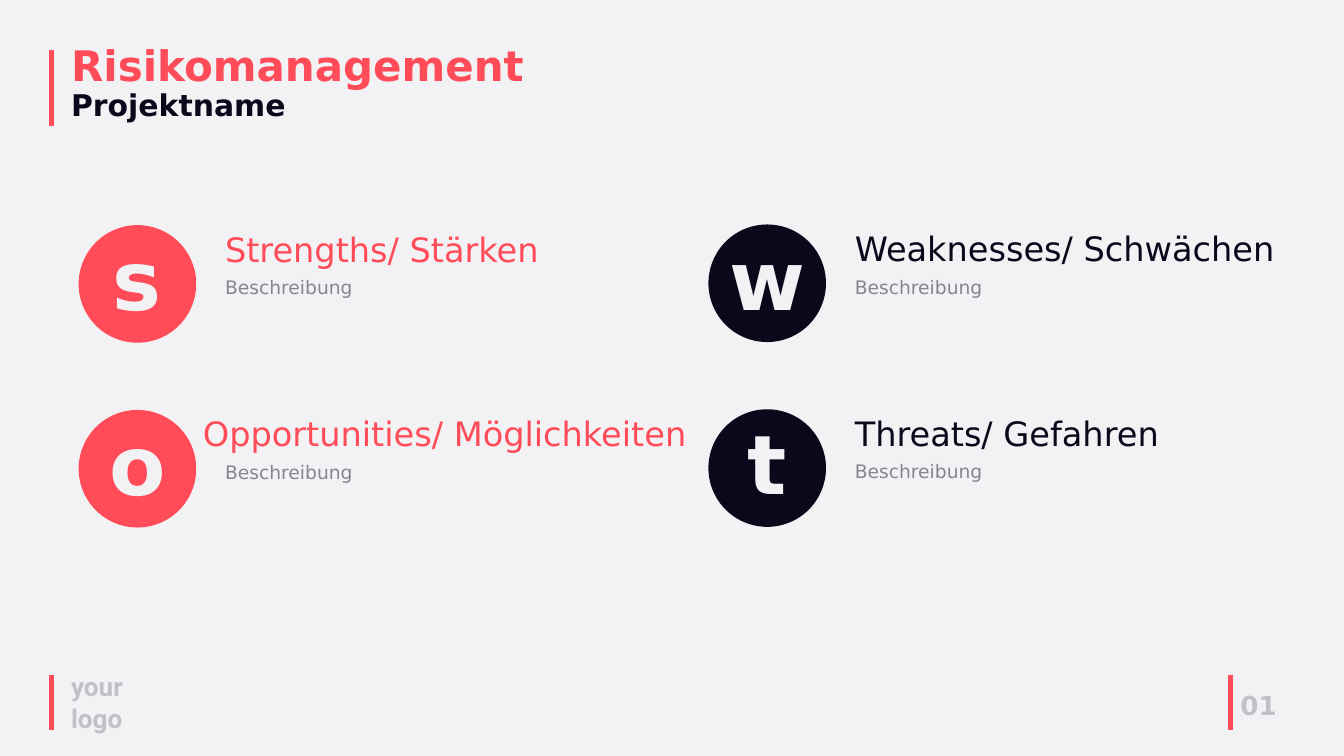
"""Builds a SWOT slide for risk management."""
from lxml import etree
from pptx import Presentation
from pptx.dml.color import RGBColor
from pptx.enum.shapes import MSO_CONNECTOR, MSO_SHAPE
from pptx.enum.text import MSO_ANCHOR, MSO_AUTO_SIZE, PP_ALIGN
from pptx.oxml.ns import qn
from pptx.util import Pt

STRAIGHT = MSO_CONNECTOR.STRAIGHT
OVAL = MSO_SHAPE.OVAL
TOP, MIDDLE = MSO_ANCHOR.TOP, MSO_ANCHOR.MIDDLE
LEFT, CENTER = PP_ALIGN.LEFT, PP_ALIGN.CENTER
GROW = MSO_AUTO_SIZE.SHAPE_TO_FIT_TEXT
TITLE_ONLY = 5

FONT = "DejaVu Sans"
COLORS = {
    "background": "F2F2F5",
    "accent": "FF4C58",
    "dark": "0A091B",
    "muted": "858591",
    "pale": "C0C0C8",
}
CIRCLE = 126
TEXT_OFFSET = 149.75
TOP_ROW, ROW_STEP = 241.2, 198
LEFT_COLUMN, RIGHT_COLUMN = 84.25, 759
RIGHT_LIFT = 0.7


def color(name):
    """Return the named colour."""
    return RGBColor.from_string(COLORS[name])


def add_run(paragraph, text, size=20, fill="dark", bold=False, font=FONT):
    """Append formatted text to a paragraph."""
    run = paragraph.add_run()
    run.text = text
    run.font.name = font
    run.font.size = Pt(size)
    run.font.bold = bold
    run.font.color.rgb = color(fill)


class SlideBuilder:
    """Holds the slide and draws its elements in one style."""

    def __init__(self, slide):
        """Keep the slide and paint its background."""
        self.slide = slide
        background = slide.background.fill
        background.solid()
        background.fore_color.rgb = color("background")

    def title(self, heading, subtitle, box):
        """Fill the title placeholder with two lines."""
        shape = self.slide.shapes.title
        shape.left, shape.top, shape.width, shape.height = map(Pt, box)
        frame = shape.text_frame
        frame.auto_size = GROW
        frame.vertical_anchor = MIDDLE
        paragraph = frame.paragraphs[0]
        paragraph.alignment = LEFT
        paragraph.line_spacing = 0.9
        add_run(paragraph, heading, size=45, fill="accent", bold=True)
        paragraph.add_line_break()
        add_run(paragraph, subtitle, size=32, bold=True)

    def text(self, text, box, shapes=None, alignment=LEFT, **style):
        """Add a wrapped text box to the slide or a group."""
        target = self.slide.shapes if shapes is None else shapes
        frame = target.add_textbox(*map(Pt, box)).text_frame
        frame.word_wrap = True
        frame.auto_size = GROW
        frame.vertical_anchor = TOP
        paragraph = frame.paragraphs[0]
        paragraph.alignment = alignment
        add_run(paragraph, text, **style)

    def bar(self, x, top, bottom):
        """Add a vertical accent line."""
        line = self.slide.shapes.add_connector(STRAIGHT, Pt(x), Pt(top), Pt(x), Pt(bottom))
        line.line.color.rgb = color("accent")
        line.line.width = Pt(5)
        etree.SubElement(line._element.spPr, qn("a:effectLst"))

    def circle(self, shapes, x, y, fill):
        """Add a plain filled circle to a group."""
        shape = shapes.add_shape(OVAL, Pt(x), Pt(y), Pt(CIRCLE), Pt(CIRCLE))
        shape.shadow.inherit = False
        shape.fill.solid()
        shape.fill.fore_color.rgb = color(fill)
        shape.line.fill.background()

    def card(self, letter, heading, x, y, fill, width=378, offset=TEXT_OFFSET):
        """Add a grouped letter badge with heading and description."""
        shapes = self.slide.shapes.add_group_shape().shapes
        self.text("Beschreibung", (x + TEXT_OFFSET, y + 51, 411, 31.5), shapes, fill="muted")
        self.text(heading, (x + offset, y, width, 51), shapes, size=36, fill=fill)
        self.circle(shapes, x, y, fill)
        self.text(letter, (x + 9, y + 0.3, 108, 113.75), shapes, CENTER,
                  size=88, fill="background", bold=True)


def main():
    """Build and save the slide."""
    presentation = Presentation()
    presentation.slide_width, presentation.slide_height = Pt(1440), Pt(810)
    layout = presentation.slide_layouts[TITLE_ONLY]
    builder = SlideBuilder(presentation.slides.add_slide(layout))

    for bar in ((55.5, 54, 135.25), (55.5, 723.5, 782), (1318.5, 723.5, 782)):
        builder.bar(*bar)
    builder.title("Risikomanagement", "Projektname", (69, 44.75, 522, 91.5))
    builder.text("your logo", (69, 715, 85.75, 75), size=28, fill="pale", bold=True, font="Roboto")
    builder.text("01", (1322, 735, 137, 41), size=28, fill="pale", bold=True)

    bottom_row = TOP_ROW + ROW_STEP
    builder.card("o", "Opportunities/ Möglichkeiten", LEFT_COLUMN, bottom_row, "accent",
                 width=548.75, offset=CIRCLE)
    builder.card("s", "Strengths/ Stärken", LEFT_COLUMN, TOP_ROW, "accent")
    builder.card("t", "Threats/ Gefahren", RIGHT_COLUMN, bottom_row - RIGHT_LIFT, "dark")
    builder.card("w", "Weaknesses/ Schwächen", RIGHT_COLUMN, TOP_ROW - RIGHT_LIFT, "dark",
                 width=474)
    presentation.save("out.pptx")


if __name__ == "__main__":
    main()
